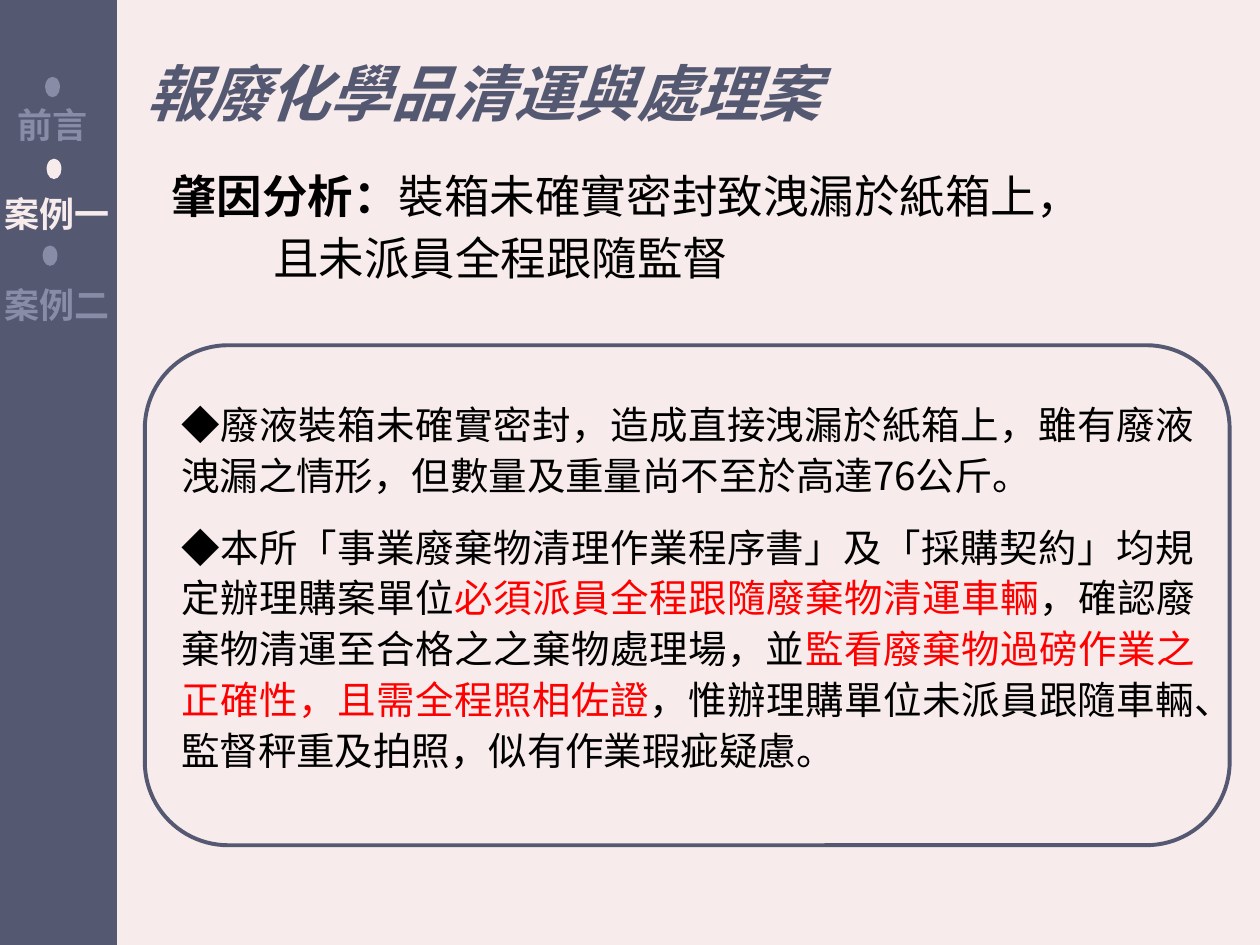
from lxml import etree
from pptx import Presentation
from pptx.dml.color import RGBColor
from pptx.enum.shapes import MSO_SHAPE
from pptx.enum.text import MSO_ANCHOR, MSO_AUTO_SIZE, PP_ALIGN
from pptx.oxml.ns import qn
from pptx.util import Cm, Pt

SLATE, MUTED, PALE, BLACK, RED = "545871", "888CA6", "F7EBEB", "000000", "FF0000"
HEAD_FONT, BODY_FONT = "Noto Sans CJK KR", "Noto Sans CJK SC"


def rgb(color):
    return RGBColor.from_string(color)


def place(shape, left, top, width, height):
    shape.left, shape.top = Cm(left), Cm(top)
    shape.width, shape.height = Cm(width), Cm(height)


def add_shape(s, kind, box, fill=None, line=None):
    sp = s.shapes.add_shape(kind, *map(Cm, box))
    sp.shadow.inherit = False
    if fill:
        sp.fill.solid()
        sp.fill.fore_color.rgb = rgb(fill)
    else:
        sp.fill.background()
    if line:
        sp.line.color.rgb = rgb(line)
        sp.line.width = Pt(2.25)
    else:
        sp.line.fill.background()
    return sp


def add_run(p, text, size, color, font, bold=False, italic=False):
    r = p.add_run()
    r.text = text
    r.font.size, r.font.name = Pt(size), font
    r.font.bold, r.font.italic = bold, italic
    r.font.color.rgb = rgb(color)
    ea = etree.SubElement(r.font._element, qn("a:ea"))
    ea.set("typeface", font)


def setup_frame(tf, wrap=True):
    tf.word_wrap = wrap
    tf.auto_size = MSO_AUTO_SIZE.NONE
    tf.vertical_anchor = MSO_ANCHOR.TOP


def add_paragraphs(tf, paragraphs, size, spacing):
    """Fill a frame with justified paragraphs, each an indent and its (text, color, bold) runs."""
    for i, (indent, runs) in enumerate(paragraphs):
        p = tf.paragraphs[0] if i == 0 else tf.add_paragraph()
        p.alignment = PP_ALIGN.JUSTIFY
        p.line_spacing = Pt(spacing)
        p.space_before, p.space_after = Pt(0), Pt(12)
        pPr = p._p.get_or_add_pPr()
        pPr.set("marL", str(Cm(indent)))
        pPr.set("indent", "0")
        etree.SubElement(pPr, qn("a:buNone"))
        for text, color, bold in runs:
            add_run(p, text, size, color, BODY_FONT, bold)


def add_sidebar(s, left, top, width, height):
    add_shape(s, MSO_SHAPE.RECTANGLE, (left, top, width, height), SLATE)
    # label, color, label x, y and width, dot x and y
    entries = [
        ("前言", MUTED, 0.13, 1.96, 1.93, 0.94, 1.55),
        ("案例一", PALE, -0.12, 3.76, 2.64, 0.97, 3.2),
        ("案例二", MUTED, -0.12, 5.59, 2.64, 0.89, 4.95),
    ]
    for label, color, x, y, w, dot_x, dot_y in entries:
        add_shape(s, MSO_SHAPE.OVAL, (left + dot_x, top + dot_y, 0.3, 0.41), color)
        tb = s.shapes.add_textbox(Cm(left + x), Cm(top + y), Cm(w), Cm(1.12))
        setup_frame(tb.text_frame, wrap=False)
        add_run(tb.text_frame.paragraphs[0], label, 20, color, HEAD_FONT, bold=True)


def add_title(s, *box):
    title = s.shapes.title
    place(title, *box)
    setup_frame(title.text_frame)
    p = title.text_frame.paragraphs[0]
    p.alignment, p.line_spacing = PP_ALIGN.LEFT, 1.5
    add_run(p, "報廢化學品清運與處理案", 35, SLATE, HEAD_FONT, bold=True, italic=True)


def add_cause(s, *box):
    tb = s.shapes.add_textbox(*map(Cm, box))
    setup_frame(tb.text_frame)
    add_paragraphs(tb.text_frame, [
        (0, [("肇因分析：", BLACK, True), ("裝箱未確實密封致洩漏於紙箱上，", BLACK, False)]),
        (2.06, [("且未派員全程跟隨監督", BLACK, False)]),
    ], 26, 23)


def add_findings(s, left, top, width, height):
    add_shape(s, MSO_SHAPE.ROUNDED_RECTANGLE, (left, top, width, height), line=SLATE)
    body = s.placeholders[1]
    place(body, left + 0.48, top + 0.91, width - 0.92, height - 2.21)
    setup_frame(body.text_frame)
    add_paragraphs(body.text_frame, [
        (0, [("◆廢液裝箱未確實密封，造成直接洩漏於紙箱上，雖有廢液洩漏之情形，"
              "但數量及重量尚不至於高達76公斤。", BLACK, False)]),
        (0, [("◆本所「事業廢棄物清理作業程序書」及「採購契約」均規定辦理購案單位", BLACK, False),
             ("必須派員全程跟隨廢棄物清運車輛", RED, False),
             ("，確認廢棄物清運至合格之之棄物處理場，並", BLACK, False),
             ("監看廢棄物過磅作業之正確性，且需全程照相佐證", RED, False),
             ("，惟辦理購單位未派員跟隨車輛、監督秤重及拍照，似有作業瑕疵疑慮。", BLACK, False)]),
    ], 22, 29)


def main():
    prs = Presentation()
    prs.slide_width, prs.slide_height = Cm(25.4), Cm(19.05)
    s = prs.slides.add_slide(prs.slide_layouts[1])
    s.background.fill.solid()
    s.background.fill.fore_color.rgb = rgb(PALE)
    add_sidebar(s, -0.03, 0, 2.39, 19.05)
    add_title(s, 2.69, 0.25, 21.87, 2.49)
    add_cause(s, 3.2, 3.56, 21.36, 2.31)
    add_findings(s, 2.92, 6.96, 21.87, 10.08)
    prs.save("out.pptx")


if __name__ == "__main__":
    main()
